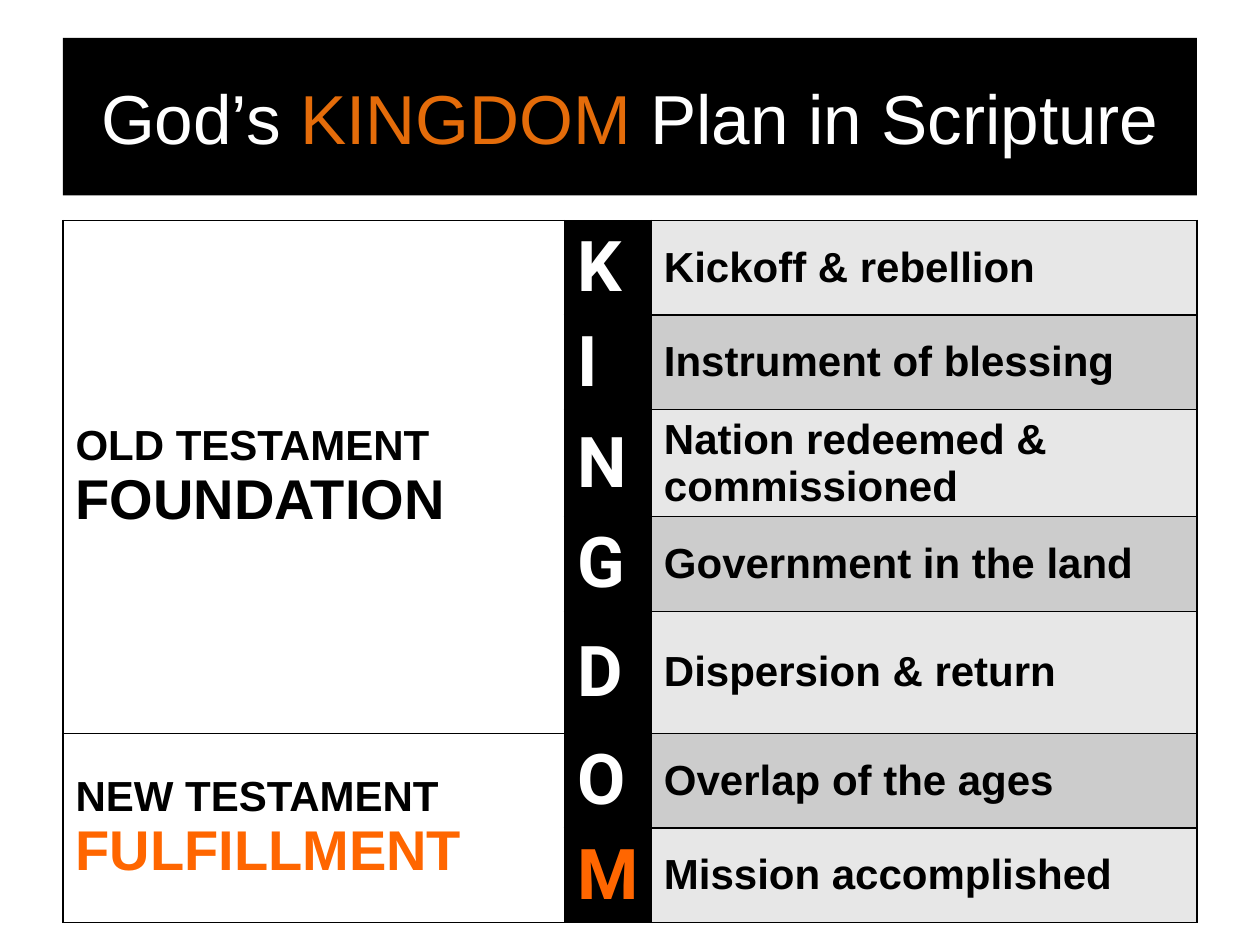
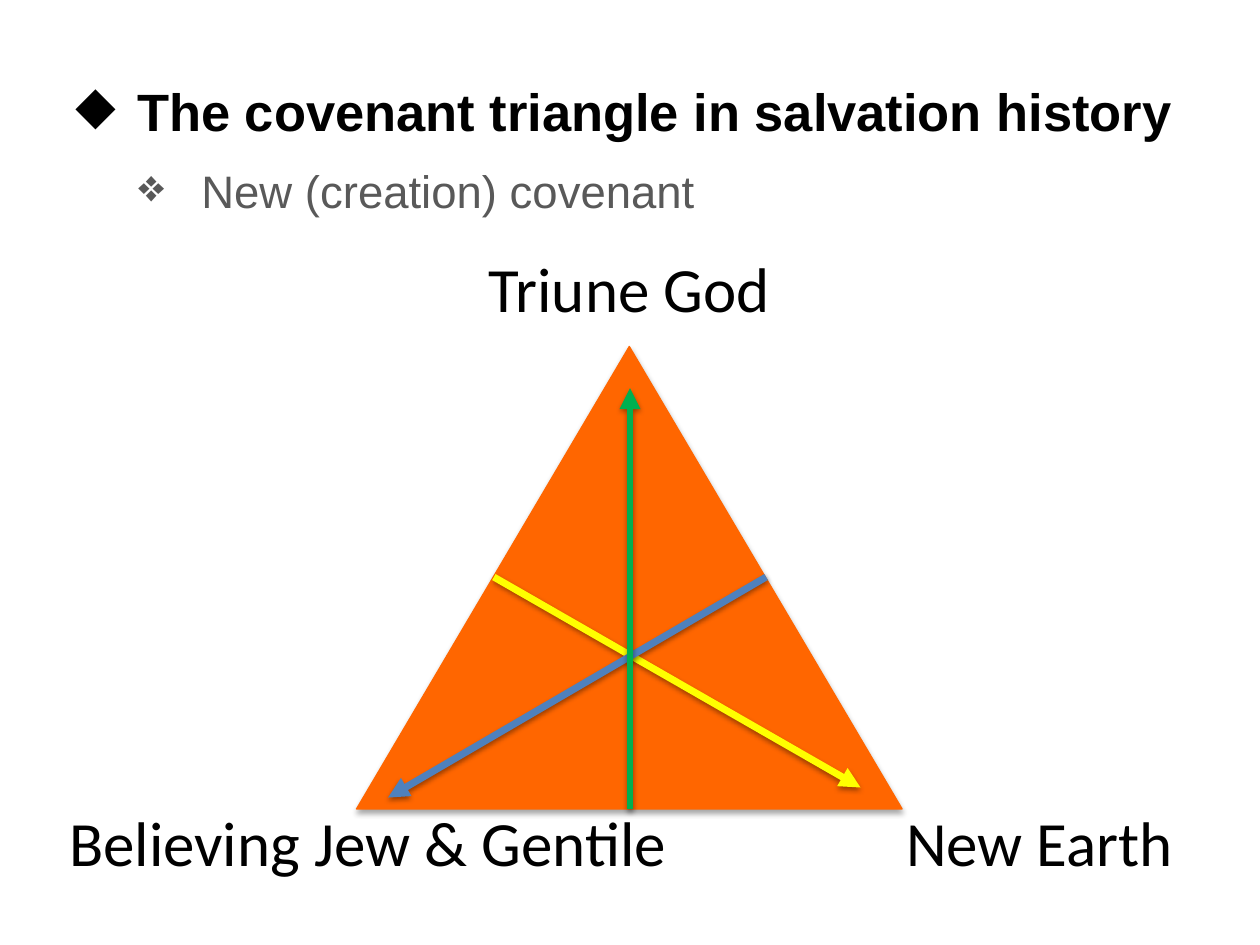
from dataclasses import dataclass

from lxml import etree
from pptx import Presentation
from pptx.dml.color import RGBColor
from pptx.enum import shapes, text
from pptx.oxml.ns import qn
from pptx.util import Emu, Inches, Pt

BLACK, WHITE, ORANGE = "000000", "FFFFFF", "FF6600"
SHADES = "E7E7E7", "CCCCCC"
LEFT, WIDTH = 0.5, 9
BLANK = 6


@dataclass
class Run:
    words: str
    size: float = 24
    color: str = BLACK
    bold: bool = False
    font: str = "Arial"


@dataclass
class Step:
    letter: str
    words: str
    height: float = 0.75
    color: str = WHITE


@dataclass
class Part:
    age: str
    role: str
    color: str
    first: int
    last: int


@dataclass
class Label:
    words: str
    left: float
    top: float
    width: float


@dataclass
class Arrow:
    start: tuple[float, float]
    end: tuple[float, float]
    color: str


STEPS = [
    Step("K", "Kickoff & rebellion"),
    Step("I", "Instrument of blessing"),
    Step("N", "Nation redeemed & commissioned", 0.85),
    Step("G", "Government in the land"),
    Step("D", "Dispersion & return", 0.97),
    Step("O", "Overlap of the ages"),
    Step("M", "Mission accomplished", color=ORANGE),
]
PARTS = [
    Part("OLD TESTAMENT ", "FOUNDATION", BLACK, 0, 4),
    Part("NEW TESTAMENT ", "FULFILLMENT", ORANGE, 5, 6),
]
LABELS = [
    Label("Triune God", 3.62, 1.93, 2.75),
    Label("Believing Jew & Gentile", 0.17, 6.33, 5.5),
    Label("New Earth", 7.04, 6.33, 2.42),
]
ARROWS = [
    Arrow((3.92, 4.58), (6.83, 6.25), "FFFF00"),
    Arrow((6.08, 4.58), (3.08, 6.33), "4F81BD"),
    Arrow((5, 6.42), (5, 3.08), "00B050"),
]


def rgb(color: str) -> RGBColor:
    return RGBColor.from_string(color)


def box(*sizes: float) -> list[Emu]:
    return [Inches(size) for size in sizes]


def paint(item, color: str) -> None:
    item.fill.solid()
    item.fill.fore_color.rgb = rgb(color)


def write(para, *runs: Run, center: bool = False, before: float = 0) -> None:
    para.alignment = text.PP_ALIGN.CENTER if center else text.PP_ALIGN.LEFT
    para.space_before = Pt(before)
    for item in runs:
        run = para.add_run()
        run.text = item.words
        font = run.font
        font.name, font.size, font.bold = item.font, Pt(item.size), item.bold
        font.color.rgb = rgb(item.color)


def bullet(para, mark: str, level: int, left: float, hang: float) -> None:
    para.level = level
    props = para._p.get_or_add_pPr()
    props.set("marL", str(Inches(left)))
    props.set("indent", str(-Inches(hang)))
    etree.SubElement(props, qn("a:buChar"), char=mark)


def shade(shape, alpha: int, drop: float) -> None:
    """Give the shape a soft shadow straight below it."""
    props = shape._element.spPr
    effects = props.find(qn("a:effectLst"))
    if effects is None:
        effects = etree.SubElement(props, qn("a:effectLst"))
    outer = etree.SubElement(
        effects, qn("a:outerShdw"), blurRad=str(Pt(3.1)),
        dist=str(Pt(drop)), dir="5400000", rotWithShape="0")
    color = etree.SubElement(outer, qn("a:srgbClr"), val=BLACK)
    etree.SubElement(color, qn("a:alpha"), val=str(alpha * 1000))


def add_block(slide, kind, place: list[Emu], color: str):
    shape = slide.shapes.add_shape(kind, *place)
    shape.shadow.inherit = False
    paint(shape, color)
    shape.line.fill.background()
    return shape


def add_text(slide, *place: float):
    frame = slide.shapes.add_textbox(*box(*place)).text_frame
    frame.word_wrap = True
    return frame


def style_cell(cell, color: str) -> None:
    props = cell._tc.get_or_add_tcPr()
    for side in "LRTB":
        line = etree.SubElement(props, qn(f"a:ln{side}"), w=str(Pt(1)))
        fill = etree.SubElement(line, qn("a:solidFill"))
        etree.SubElement(fill, qn("a:srgbClr"), val=BLACK)
    paint(cell, color)
    cell.vertical_anchor = text.MSO_ANCHOR.MIDDLE


def add_title(slide) -> None:
    band = add_block(slide, shapes.MSO_SHAPE.RECTANGLE,
                     box(LEFT, 0.3, WIDTH, 1.25), BLACK)
    frame = band.text_frame
    frame.word_wrap = True
    frame.vertical_anchor = text.MSO_ANCHOR.MIDDLE
    pieces = [("God’s ", WHITE), ("KINGDOM ", "E46C0A"),
              ("Plan in Scripture", WHITE)]
    runs = [Run(words, 39.6, color) for words, color in pieces]
    write(frame.paragraphs[0], *runs, center=True)


def add_plan(slide) -> None:
    high = sum(step.height for step in STEPS)
    grid = slide.shapes.add_table(
        len(STEPS), 3, *box(LEFT, 1.75, WIDTH, high)).table
    grid.first_row = grid.horz_banding = False
    for col, wide in zip(grid.columns, box(3.98, 0.69, 4.33)):
        col.width = wide
    for row, step in enumerate(STEPS):
        grid.rows[row].height = Inches(step.height)
        fills = WHITE, BLACK, SHADES[row % 2]
        for col, fill in enumerate(fills):
            style_cell(grid.cell(row, col), fill)
        write(grid.cell(row, 1).text_frame.paragraphs[0],
              Run(step.letter, 40, step.color, True, "Roboto"))
        write(grid.cell(row, 2).text_frame.paragraphs[0],
              Run(step.words, bold=True))
    for part in PARTS:
        cell = grid.cell(part.first, 0)
        cell.merge(grid.cell(part.last, 0))
        write(cell.text_frame.paragraphs[0], Run(part.age, bold=True),
              Run(part.role, 32, part.color, True))


def add_points(slide) -> None:
    frame = add_text(slide, LEFT, 0.58, WIDTH, 6.92)
    head, sub = frame.paragraphs[0], frame.add_paragraph()
    write(head, Run("The covenant triangle in salvation history", 30,
                    bold=True), before=24)
    bullet(head, "◆", 0, 0.49, 0.49)
    write(sub, Run("New (creation) covenant", 26, "595959"), before=12)
    bullet(sub, "❖", 1, 1, 0.5)


def add_arrow(slide, arrow: Arrow) -> None:
    link = slide.shapes.add_connector(
        shapes.MSO_CONNECTOR.STRAIGHT, *box(*arrow.start, *arrow.end))
    link.line.width = Pt(4)
    link.line.color.rgb = rgb(arrow.color)
    etree.SubElement(link.line._get_or_add_ln(), qn("a:tailEnd"),
                     type="triangle")
    shade(link, 38, 1.6)


def add_triangle(slide) -> None:
    shape = add_block(slide, shapes.MSO_SHAPE.ISOSCELES_TRIANGLE,
                      box(2.83, 2.75, 4.33, 3.67), ORANGE)
    shape.line.color.rgb = rgb(ORANGE)
    shape.line.width = Pt(0.75)
    shade(shape, 35, 1.8)
    for label in LABELS:
        frame = add_text(slide, label.left, label.top, label.width, 0.71)
        write(frame.paragraphs[0], Run(label.words, 36, font="Calibri"),
              center=True)
    for arrow in ARROWS:
        add_arrow(slide, arrow)


def main() -> None:
    deck = Presentation()
    deck.slide_width, deck.slide_height = box(10, 7.5)
    plan, covenant = [deck.slides.add_slide(deck.slide_layouts[BLANK])
                      for _ in range(2)]
    add_title(plan)
    add_plan(plan)
    add_points(covenant)
    add_triangle(covenant)
    deck.save("out.pptx")


if __name__ == "__main__":
    main()
